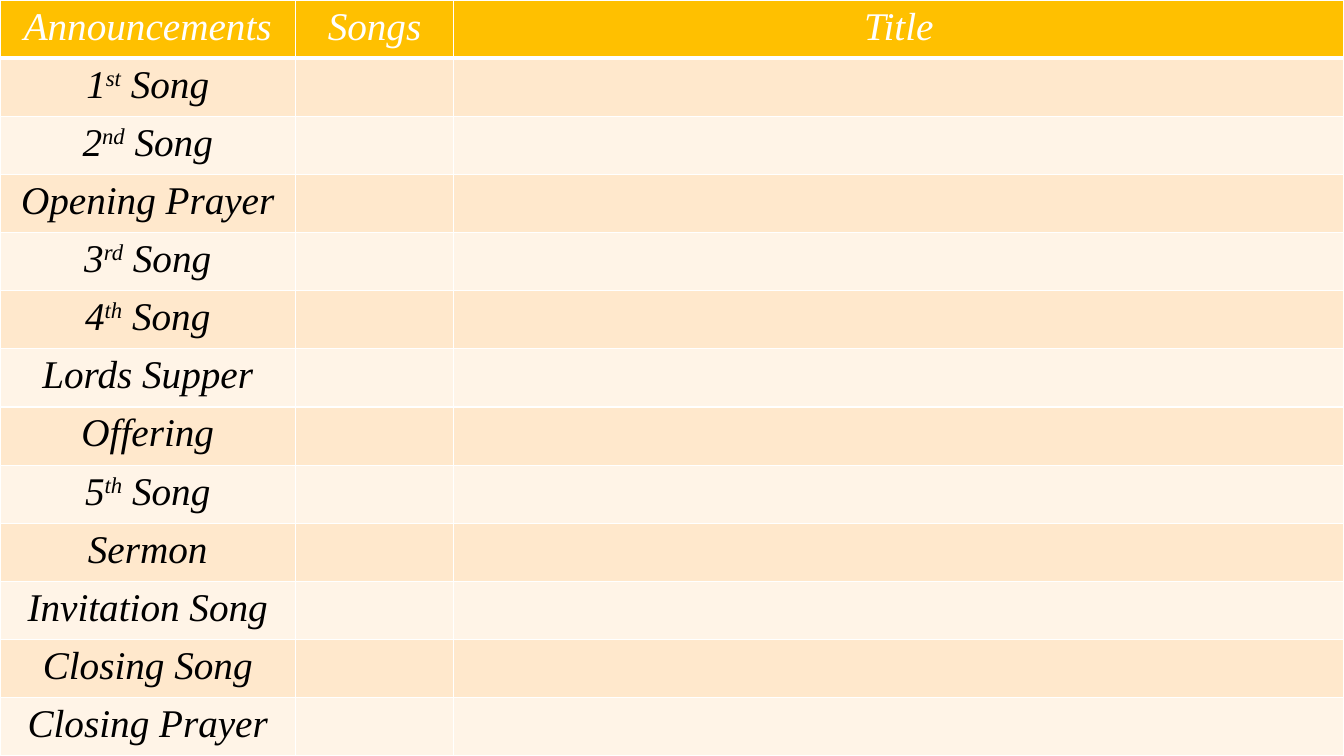
import dataclasses

import lxml.etree
import pptx
import pptx.dml.color
import pptx.enum.text
import pptx.oxml.ns
import pptx.util

Inches = pptx.util.Inches


@dataclasses.dataclass(frozen=True)
class Theme:
    font: str = "Times New Roman"
    size: int = 28
    header_fill: str = "FFC000"
    header_text: str = "FFFFFF"
    bands: tuple = ("FFE8CC", "FFF4E7")
    text: str = "000000"
    border: str = "FFFFFF"
    border_width: float = 1
    header_rule: float = 3


THEME = Theme()
WIDTH, HEIGHT = 13.33, 7.5
COLUMN_WIDTHS = (2.93, 1.57, 8.83)
HEADERS = ("Announcements", "Songs", "Title")
SERVICE = (
    ("1", "st", " Song"),
    ("2", "nd", " Song"),
    ("Opening Prayer",),
    ("3", "rd", " Song"),
    ("4", "th", " Song"),
    ("Lords Supper",),
    ("Offering",),
    ("5", "th", " Song"),
    ("Sermon",),
    ("Invitation Song",),
    ("Closing Song",),
    ("Closing Prayer",),
)


def rgb(value):
    return pptx.dml.color.RGBColor.from_string(value)


def add_border(cell, side, width):
    qn = pptx.oxml.ns.qn
    tcPr = cell._tc.get_or_add_tcPr()
    ln = lxml.etree.SubElement(tcPr, qn(f"a:ln{side}"), w=str(pptx.util.Pt(width)))
    fill = lxml.etree.SubElement(ln, qn("a:solidFill"))
    lxml.etree.SubElement(fill, qn("a:srgbClr"), val=THEME.border)


def style_cell(cell, fill, is_header):
    for side in "LRTB":
        thick = is_header and side == "B"
        add_border(cell, side, THEME.header_rule if thick else THEME.border_width)
    cell.fill.solid()
    cell.fill.fore_color.rgb = rgb(fill)


def write_cell(cell, parts, color):
    p = cell.text_frame.paragraphs[0]
    p.alignment = pptx.enum.text.PP_ALIGN.CENTER
    for i, text in enumerate(parts):
        r = p.add_run()
        r.text = text
        r.font.name = THEME.font
        r.font.size = pptx.util.Pt(THEME.size)
        r.font.bold = False
        r.font.italic = True
        r.font.color.rgb = rgb(color)
        if i == 1:
            r._r.get_or_add_rPr().set("baseline", "30000")


def add_service_table(s, left, top, width, height):
    rows = [[(title,) for title in HEADERS]] + [[parts, (), ()] for parts in SERVICE]
    frame = s.shapes.add_table(
        len(rows), len(HEADERS), Inches(left), Inches(top), Inches(width), Inches(height)
    )
    table = frame.table
    for column, share in zip(table.columns, COLUMN_WIDTHS):
        column.width = Inches(width * share / sum(COLUMN_WIDTHS))
    for i, row in enumerate(rows):
        table.rows[i].height = Inches(height / len(rows))
        is_header = i == 0
        fill = THEME.header_fill if is_header else THEME.bands[(i - 1) % 2]
        color = THEME.header_text if is_header else THEME.text
        for j, parts in enumerate(row):
            cell = table.cell(i, j)
            style_cell(cell, fill, is_header)
            write_cell(cell, parts, color)


def main():
    prs = pptx.Presentation()
    prs.slide_width = Inches(WIDTH)
    prs.slide_height = Inches(HEIGHT)
    s = prs.slides.add_slide(prs.slide_layouts[6])
    add_service_table(s, 0, 0, WIDTH, HEIGHT)
    prs.save("out.pptx")


if __name__ == "__main__":
    main()
